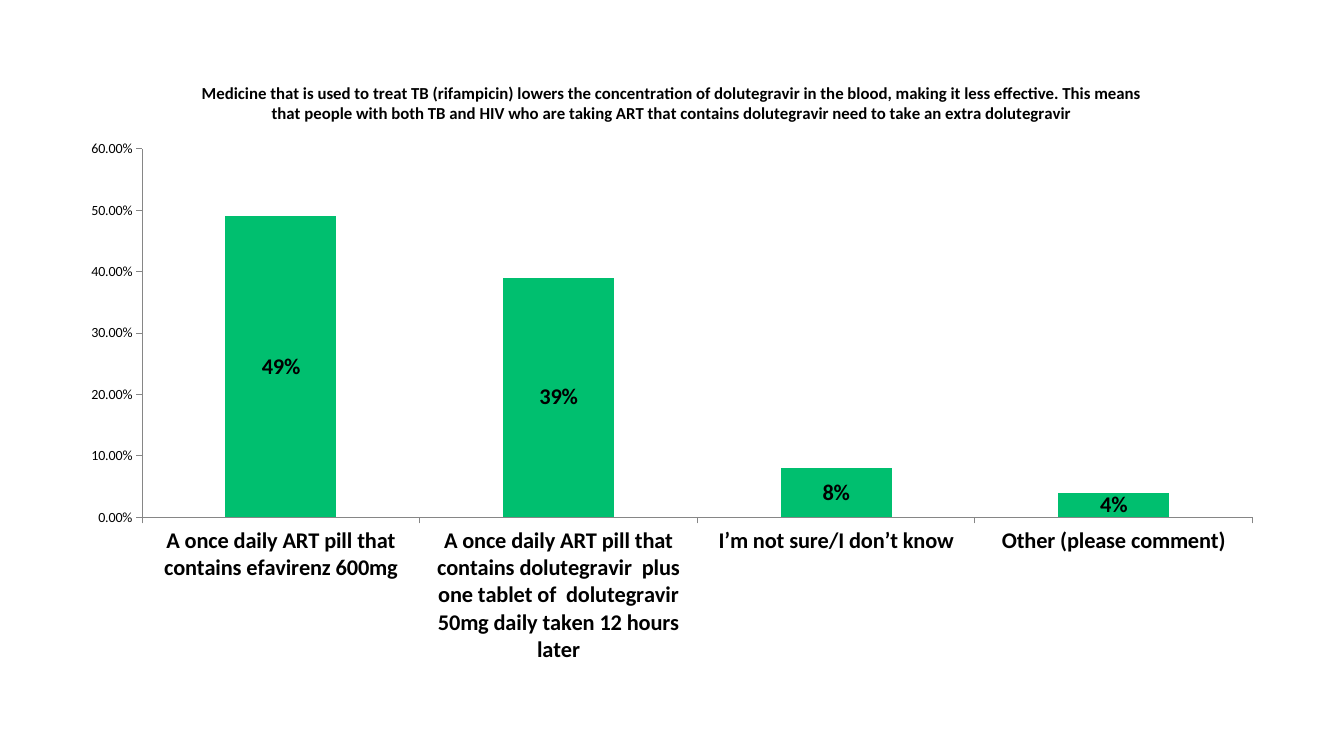
from pptx import Presentation
from pptx.chart.data import CategoryChartData
from pptx.dml.color import RGBColor
from pptx.enum import chart as ch
from pptx.util import Emu, Pt

BLACK = RGBColor(0x00, 0x00, 0x00)
GREEN = RGBColor(0x00, 0xBF, 0x6F)
GREY = RGBColor(0x86, 0x86, 0x86)
PX = 9525

TITLE = (
    "Medicine that is used to treat TB (rifampicin) lowers the concentration of "
    "dolutegravir in the blood, making it less effective. This means that people "
    "with both TB and HIV who are taking ART that contains dolutegravir need to "
    "take an extra dolutegravir"
)
ANSWERS = {
    "A once daily ART pill that contains efavirenz 600mg": 0.49,
    "A once daily ART pill that contains dolutegravir  plus one tablet of  "
    "dolutegravir 50mg daily taken 12 hours later": 0.39,
    "I’m not sure/I don’t know": 0.08,
    "Other (please comment)": 0.04,
}


class SurveySlide:
    """Holds the style and the current slide, and adds elements to it."""

    font_name = "Calibri"

    def __init__(self, prs):
        self.slide = prs.slides.add_slide(prs.slide_layouts[6])

    def style(self, font, size, bold=False):
        font.name = self.font_name
        font.size = Pt(size)
        font.bold = bold
        font.color.rgb = BLACK

    def chart_title(self, chart, title):
        chart.has_title = True
        p = chart.chart_title.text_frame.paragraphs[0]
        r = p.add_run()
        r.text = title
        self.style(r.font, 12, True)
        chart.chart_title.include_in_layout = False

    def axis(self, axis, size, bold=False):
        axis.has_major_gridlines = False
        axis.major_tick_mark = ch.XL_TICK_MARK.OUTSIDE
        axis.minor_tick_mark = ch.XL_TICK_MARK.NONE
        axis.format.line.color.rgb = GREY
        axis.format.line.width = Pt(0.75)
        self.style(axis.tick_labels.font, size, bold)

    def column_chart(self, x, y, w, h, title, answers):
        data = CategoryChartData(number_format="0.00%")
        data.categories = list(answers)
        data.add_series("Series 1", list(answers.values()))
        box = [Emu(n * PX) for n in (x, y, w, h)]
        chart = self.slide.shapes.add_chart(
            ch.XL_CHART_TYPE.COLUMN_CLUSTERED, *box, data
        ).chart
        self.style(chart.font, 10)
        chart.has_legend = False
        self.chart_title(chart, title)
        self.axis(chart.category_axis, 16, True)
        self.axis(chart.value_axis, 10)
        chart.value_axis.minimum_scale = 0
        chart.value_axis.maximum_scale = 0.6
        chart.value_axis.major_unit = 0.1
        chart.value_axis.tick_labels.number_format = "0.00%"
        chart.value_axis.tick_labels.number_format_is_linked = False

        plot = chart.plots[0]
        plot.gap_width = 150
        plot.vary_by_categories = False
        series = plot.series[0]
        series.invert_if_negative = False
        series.format.fill.solid()
        series.format.fill.fore_color.rgb = GREEN
        labels = series.data_labels
        labels.show_value = True
        labels.number_format = "0%"
        labels.number_format_is_linked = False
        labels.position = ch.XL_LABEL_POSITION.CENTER
        self.style(labels.font, 16, True)


def main():
    prs = Presentation()
    prs.slide_width = Emu(1280 * PX)
    prs.slide_height = Emu(720 * PX)
    SurveySlide(prs).column_chart(64, 58, 1152, 586, TITLE, ANSWERS)
    prs.save("out.pptx")


if __name__ == "__main__":
    main()
